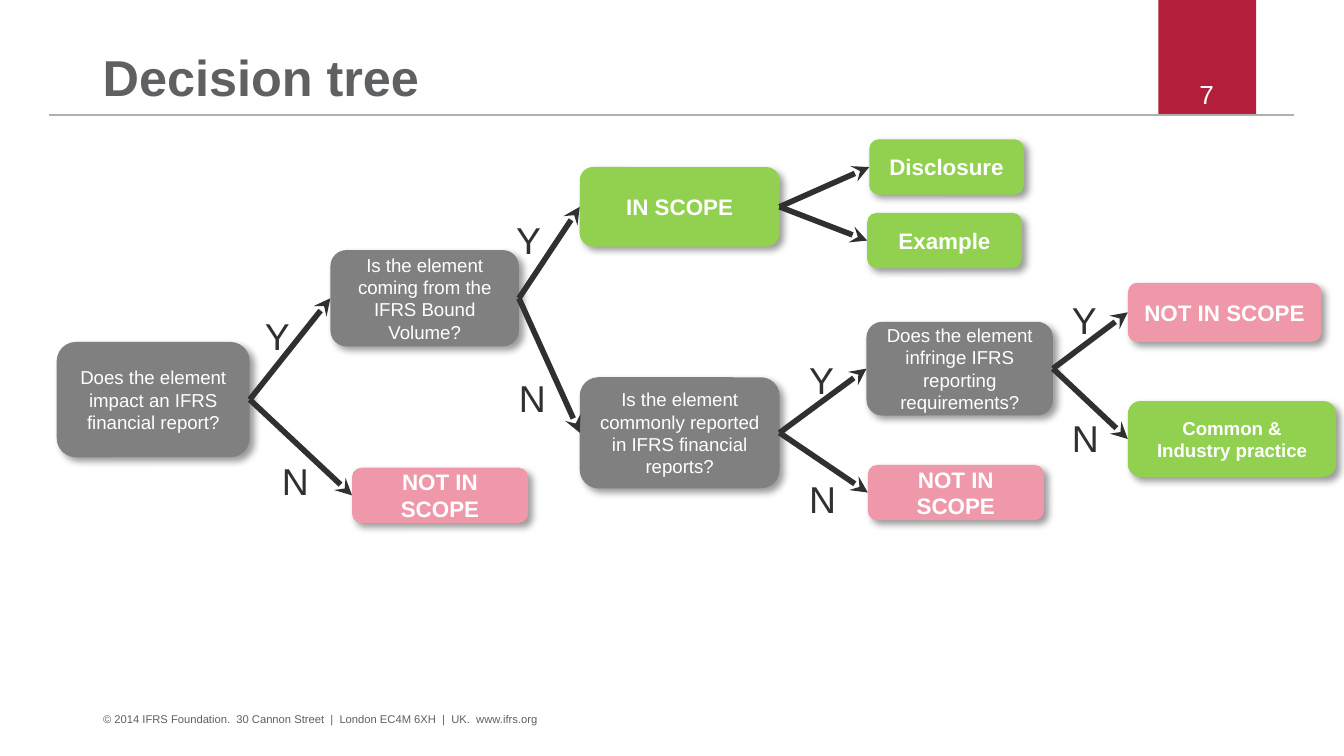
from pptx import Presentation
from pptx.dml.color import RGBColor
from pptx.enum.shapes import MSO_CONNECTOR, MSO_SHAPE
from pptx.enum.text import MSO_ANCHOR, PP_ALIGN
from pptx.oxml import parse_xml
from pptx.oxml.ns import nsdecls, qn
from pptx.oxml.xmlchemy import OxmlElement
from pptx.util import Pt

CRIMSON = RGBColor(0xB3, 0x1E, 0x3B)
RULE_GRAY = RGBColor(0xAF, 0xAF, 0xB0)
TEXT_GRAY = RGBColor(0x5F, 0x60, 0x62)
QUESTION_GRAY = RGBColor(0x80, 0x80, 0x80)
GREEN = RGBColor(0x92, 0xD0, 0x50)
PINK = RGBColor(0xEE, 0x98, 0xA9)
INK = RGBColor(0x2F, 0x30, 0x31)
WHITE = RGBColor(0xFF, 0xFF, 0xFF)

SHADOW = (
    f'<a:outerShdw {nsdecls("a")} blurRad="50800" dist="38100" dir="2700000" algn="tl" rotWithShape="0">'
    '<a:srgbClr val="000000"><a:alpha val="40000"/></a:srgbClr></a:outerShdw>'
)


def write(shape, text, size, color, bold=False, align=PP_ALIGN.LEFT, margins=(0, 0)):
    frame = shape.text_frame
    frame.text = text
    frame.margin_left = frame.margin_right = Pt(margins[0])
    frame.margin_top = frame.margin_bottom = Pt(margins[1])
    paragraph = frame.paragraphs[0]
    paragraph.alignment = align
    font = paragraph.runs[0].font
    font.name, font.size, font.bold = "Arial", Pt(size), bold
    font.color.rgb = color
    return frame


def add_line(start, end, color, width):
    line = slide.shapes.add_connector(MSO_CONNECTOR.STRAIGHT, *map(Pt, start + end))
    line.line.color.rgb = color
    line.line.width = Pt(width)
    line.element.spPr.append(OxmlElement("a:effectLst"))
    return line


presentation = Presentation()
presentation.slide_width, presentation.slide_height = Pt(720), Pt(405)
slide = presentation.slides.add_slide(presentation.slide_layouts[5])

banner = slide.shapes.add_shape(MSO_SHAPE.RECTANGLE, Pt(620.6), Pt(0), Pt(52.4), Pt(61.6))
banner.shadow.inherit = False
banner.fill.solid()
banner.fill.fore_color.rgb = CRIMSON
banner.line.fill.background()
add_line((26, 61.6), (693.4, 61.6), RULE_GRAY, 1.2)

title = slide.shapes.title
title.left, title.top, title.width, title.height = Pt(55), Pt(10.8), Pt(533.5), Pt(46.8)
write(title, "Decision tree", 27, TEXT_GRAY, bold=True)
title.text_frame.vertical_anchor = MSO_ANCHOR.BOTTOM
title.text_frame.paragraphs[0].line_spacing = 0.9

footer = slide.shapes.add_textbox(Pt(55.2), Pt(381.6), Pt(445), Pt(11.5))
write(footer, "© 2014 IFRS Foundation.  30 Cannon Street  |  London EC4M 6XH  |  UK.  www.ifrs.org",
      6, TEXT_GRAY).word_wrap = True
page_number = slide.shapes.add_textbox(Pt(621.6), Pt(41.8), Pt(49.7), Pt(11.5))
write(page_number, "7", 14, WHITE, align=PP_ALIGN.CENTER).word_wrap = True

nodes = {
    "bound volume": ("Is the element coming from the IFRS Bound Volume?",
                     177, 134, 101, 51.6, QUESTION_GRAY, 10),
    "no impact": ("NOT IN SCOPE", 188.6, 250.6, 94.3, 29.6, PINK, 12),
    "impact": ("Does the element impact an IFRS financial report?",
               30.4, 183.2, 103.4, 61.8, QUESTION_GRAY, 10),
    "common": ("Is the element commonly reported in IFRS financial reports?",
               310.6, 202.1, 107, 59.5, QUESTION_GRAY, 10),
    "in scope": ("IN SCOPE", 310.6, 89.5, 107, 42.6, GREEN, 12),
    "infringe": ("Does the element infringe IFRS reporting requirements?",
                 464.2, 172.4, 99.9, 50.2, QUESTION_GRAY, 10),
    "disclosure": ("Disclosure", 465.7, 74.7, 82.8, 29.6, GREEN, 12),
    "example": ("Example", 464.6, 114.1, 82.8, 29.6, GREEN, 12),
    "uncommon": ("NOT IN SCOPE", 464.9, 249.1, 94.3, 29.6, PINK, 12),
    "infringing": ("NOT IN SCOPE", 604.2, 151.5, 103.7, 31.7, PINK, 12),
    "practice": ("Common & Industry practice", 604.2, 214.9, 111.6, 40.6, GREEN, 10),
}
boxes = {}
for name, (text, left, top, width, height, color, size) in nodes.items():
    box = slide.shapes.add_shape(
        MSO_SHAPE.ROUNDED_RECTANGLE, Pt(left), Pt(top), Pt(width), Pt(height))
    box.fill.solid()
    box.fill.fore_color.rgb = color
    box.line.fill.background()
    box.shadow.inherit = False
    box.element.spPr.find(qn("a:effectLst")).append(parse_xml(SHADOW))
    frame = write(box, text, size, WHITE, color != QUESTION_GRAY, PP_ALIGN.CENTER, (6.8, 3.4))
    frame.vertical_anchor = MSO_ANCHOR.MIDDLE
    frame.word_wrap = True
    boxes[name] = box

branches = [
    ("impact", "bound volume", "Y", 134.8, 164.2),
    ("bound volume", "in scope", "Y", 269.4, 113),
    ("in scope", "disclosure", None, 0, 0),
    ("common", "infringe", "Y", 426.4, 187.9),
    ("infringe", "infringing", "Y", 567.2, 155.5),
    ("impact", "no impact", "N", 144, 241.9),
    ("bound volume", "common", "N", 270.9, 197.3),
    ("common", "uncommon", "N", 426.4, 251.3),
    ("infringe", "practice", "N", 567.2, 218.9),
    ("in scope", "example", None, 0, 0),
]
for source, target, answer, left, top in branches:
    arrow = add_line((0, 0), (0, 0), INK, 3)
    arrow.begin_connect(boxes[source], 3)
    arrow.end_connect(boxes[target], 1)
    head = OxmlElement("a:tailEnd")
    head.set("type", "stealth")
    arrow.line.fill.solid()
    arrow.line.color.rgb = INK
    arrow.element.spPr.get_or_add_ln().append(head)
    if answer:
        label = slide.shapes.add_textbox(Pt(left), Pt(top), Pt(28), Pt(31.5))
        write(label, answer, 20, INK, margins=(7.2, 3.6)).word_wrap = False

presentation.save("out.pptx")
